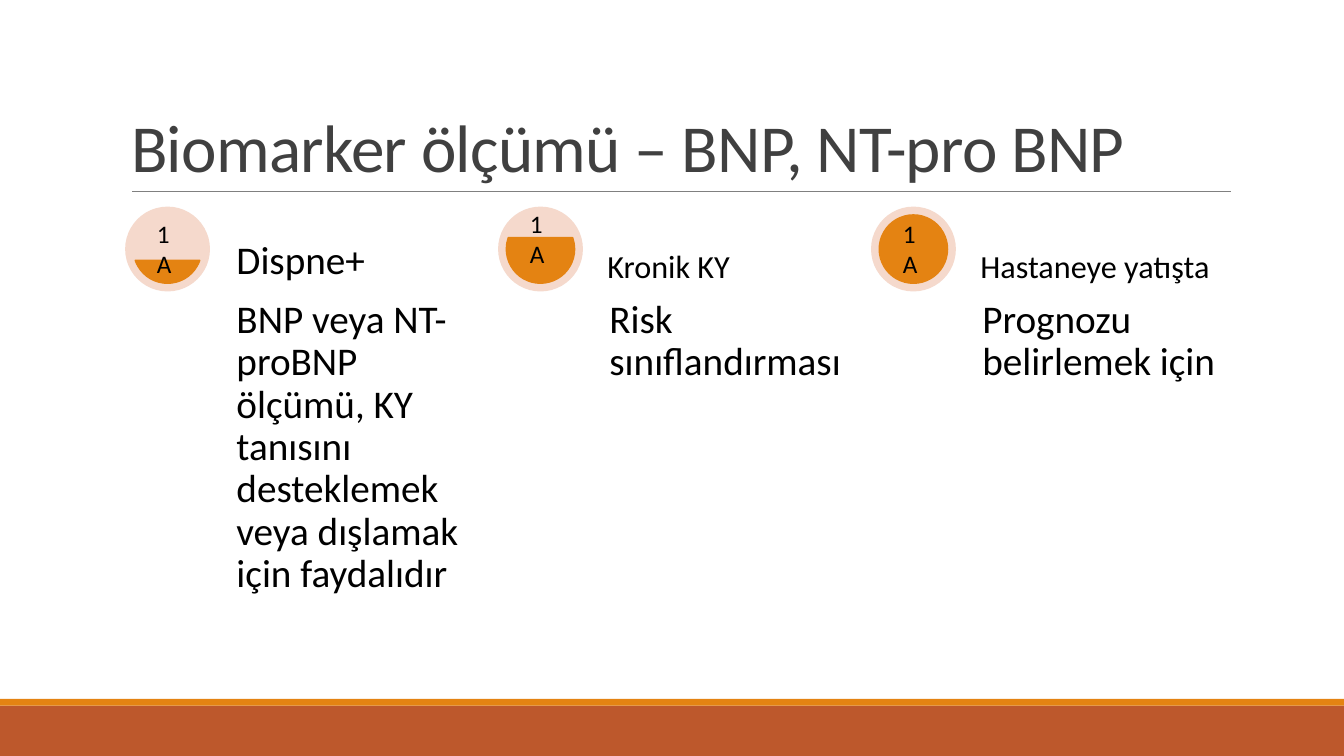
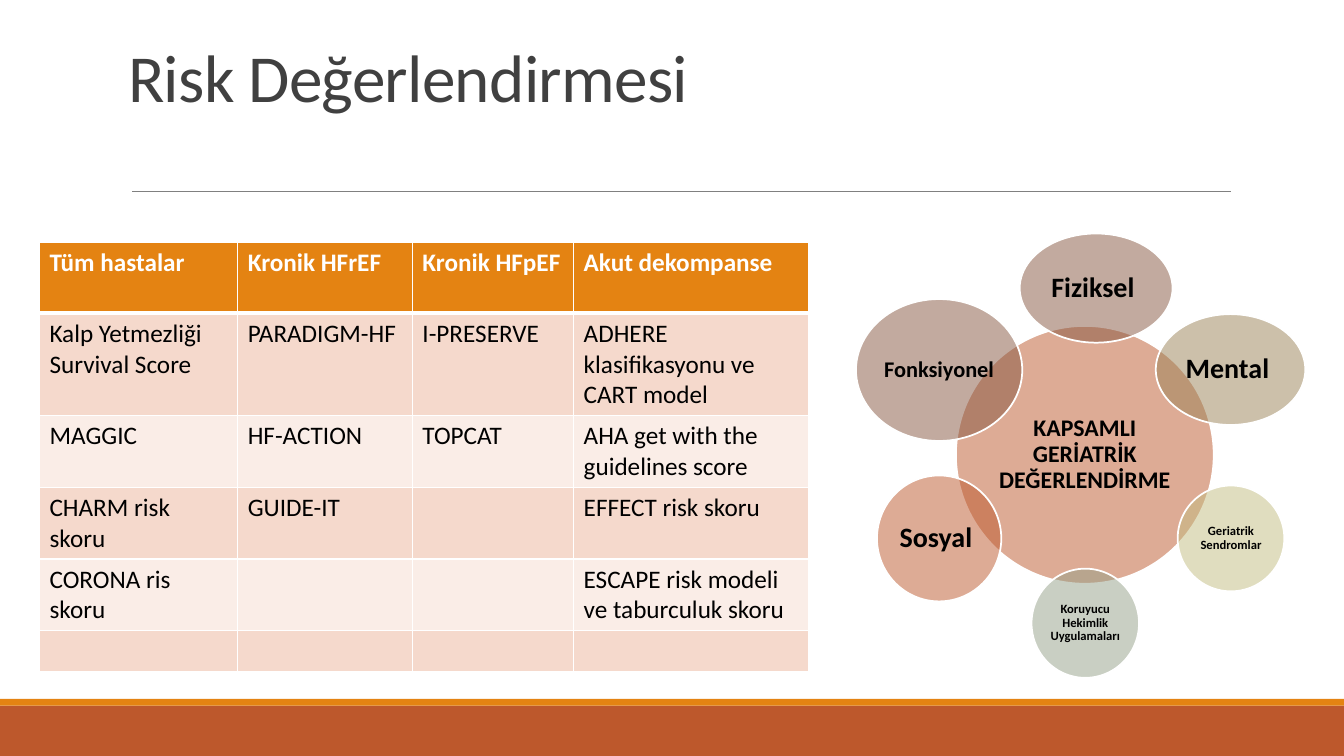
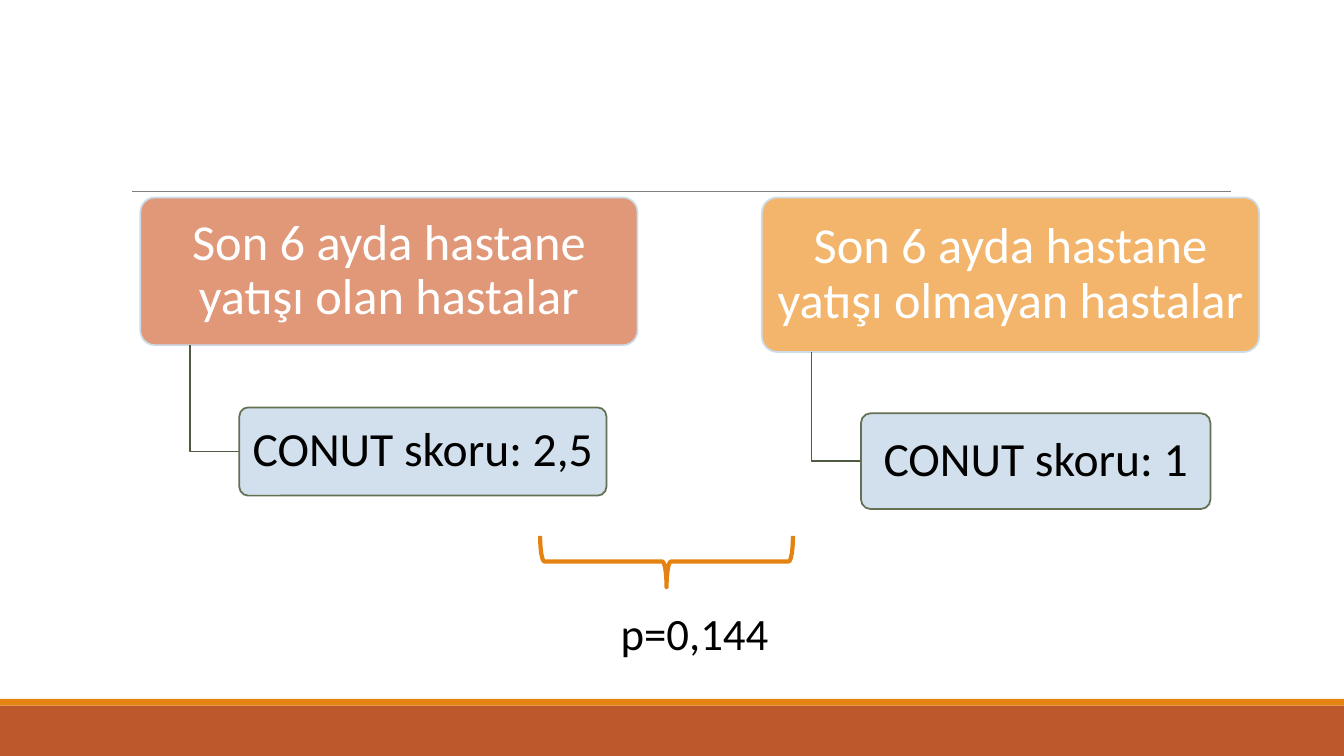
"""Build three slides on heart failure biomarkers, risk assessment and CONUT scores."""
from dataclasses import dataclass

import lxml.etree
import pptx
import pptx.util
from pptx.dml.color import RGBColor
from pptx.enum.shapes import MSO_CONNECTOR, MSO_SHAPE
from pptx.enum.text import MSO_ANCHOR, MSO_AUTO_SIZE, PP_ALIGN
from pptx.oxml.ns import qn

ORANGE = RGBColor(0xE4, 0x83, 0x12)
RUST = RGBColor(0xBD, 0x58, 0x2C)
BROWN = RGBColor(0x86, 0x56, 0x40)
TAN = RGBColor(0x9B, 0x83, 0x57)
KHAKI = RGBColor(0xC2, 0xBC, 0x80)
SAGE = RGBColor(0x94, 0xA0, 0x88)
PINK = RGBColor(0xF5, 0xD9, 0xCC)
PALE_PINK = RGBColor(0xFA, 0xED, 0xE7)
SALMON = RGBColor(0xE0, 0x98, 0x78)
APRICOT = RGBColor(0xF3, 0xB5, 0x6C)
PALE_BLUE = RGBColor(0xCC, 0xDD, 0xEA)
MOSS = RGBColor(0x63, 0x70, 0x52)
DARK_MOSS = RGBColor(0x4F, 0x5A, 0x42)
GREY = RGBColor(0x80, 0x80, 0x80)
CHARCOAL = RGBColor(0x40, 0x40, 0x40)
BLACK = RGBColor(0, 0, 0)
WHITE = RGBColor(0xFF, 0xFF, 0xFF)

FONT = "Calibri"
COLUMNS, ROWS = 160, 90
WIDTH, HEIGHT = pptx.util.Inches(13.3333), pptx.util.Inches(7.5)


@dataclass(frozen=True)
class Box:
    """Place on the grid, in columns and rows."""
    x: float
    y: float
    w: float
    h: float

    def emu(self) -> tuple[int, int, int, int]:
        """Return left, top, width and height in EMU."""
        return col(self.x), row(self.y), col(self.w), row(self.h)


@dataclass(frozen=True)
class Use:
    """One use of a biomarker."""
    heading: str
    size: int
    body: str
    chord: tuple[float, float]
    badge_y: float


@dataclass(frozen=True)
class Bubble:
    """One circle of the geriatric assessment."""
    text: str
    size: int
    color: RGBColor
    box: Box


@dataclass(frozen=True)
class Group:
    """One patient group with its score."""
    name: str
    color: RGBColor
    box: Box
    score: str
    score_box: Box


USES = [
    Use("Dispne+", 28, "BNP veya NT-proBNP ölçümü, KY tanısını desteklemek "
        "veya dışlamak için faydalıdır", (11.68, 96.32), 25.4),
    Use("Kronik KY", 23, "Risk sınıflandırması", (204.32, 119.68), 24.2),
    Use("Hastaneye yatışta", 23, "Prognozu belirlemek için", (162, 162), 25.4),
]
BUBBLES = [
    Bubble("KAPSAMLI GERİATRİK DEĞERLENDİRME", 17, RUST, Box(113.8, 38.8, 30.7, 30.7)),
    Bubble("Fiziksel ", 20, BROWN, Box(121.4, 27.8, 18.2, 13)),
    Bubble("Mental ", 20, TAN, Box(137.6, 37.4, 17.8, 13.2)),
    Bubble("Geriatrik Sendromlar", 9, KHAKI, Box(140.2, 57.8, 12.7, 12.6)),
    Bubble("Koruyucu Hekimlik Uygulamaları", 9, SAGE, Box(122.8, 67.7, 12.8, 13)),
    Bubble("Sosyal ", 20, RUST, Box(104.4, 56.6, 14.8, 15)),
    Bubble("Fonksiyonel", 16, BROWN, Box(101.9, 35.6, 19.8, 16.9)),
]
RISK_COLUMNS = [23.6, 20.8, 19.2, 28]
RISK_ROWS = [8.4, 12, 8.4, 8.4, 8.4, 4.9]
RISK_SCORES = [
    ["Tüm hastalar", "Kronik HFrEF", "Kronik HFpEF", "Akut dekompanse"],
    ["Kalp Yetmezliği Survival Score", "PARADIGM-HF", "I-PRESERVE",
     "ADHERE klasifikasyonu ve CART model"],
    ["MAGGIC", "HF-ACTION", "TOPCAT", "AHA get with the guidelines score"],
    ["CHARM risk skoru", "GUIDE-IT", "", "EFFECT risk skoru"],
    ["CORONA ris skoru", "", "", "ESCAPE risk modeli ve taburculuk skoru"],
    ["", "", "", ""],
]
GROUPS = [
    Group("Son 6 ayda hastane yatışı olan hastalar", SALMON, Box(16.7, 23.5, 59.2, 17.6),
          "CONUT skoru: 2,5", Box(28.5, 48.5, 43.7, 10.5)),
    Group("Son 6 ayda hastane yatışı olmayan hastalar", APRICOT, Box(90.7, 23.5, 59.2, 18.4),
          "CONUT skoru: 1", Box(102.5, 49.2, 41.6, 11.4)),
]


def col(n: float) -> int:
    """Convert grid columns to EMU."""
    return round(n * WIDTH / COLUMNS)


def row(n: float) -> int:
    """Convert grid rows to EMU."""
    return round(n * HEIGHT / ROWS)


def write(tf, text: str, size: float, color: RGBColor = BLACK, bold: bool = False,
          align=PP_ALIGN.LEFT, spacing: float = 1.0):
    """Write one formatted paragraph and return it."""
    p = tf.paragraphs[0]
    p.text = text
    p.alignment = align
    p.line_spacing = spacing
    p.font.name, p.font.size, p.font.bold = FONT, pptx.util.Pt(size), bold
    p.font.color.rgb = color
    return p


def set_insets(tf, x: float, y: float) -> None:
    """Set the side and the top and bottom insets in inches."""
    tf.margin_left = tf.margin_right = pptx.util.Inches(x)
    tf.margin_top = tf.margin_bottom = pptx.util.Inches(y)


def add_text(s, box: Box, text: str, size: float, inset: float | None = None,
             anchor=MSO_ANCHOR.TOP, spacing: float = 1.0) -> None:
    """Add a wrapped text box."""
    tf = s.shapes.add_textbox(*box.emu()).text_frame
    tf.word_wrap = True
    tf.vertical_anchor = anchor
    if inset is not None:
        set_insets(tf, inset, inset)
    write(tf, text, size, spacing=spacing)


def style_line(sp, color: RGBColor, width: float) -> None:
    """Set an outline."""
    sp.line.color.rgb = color
    sp.line.width = pptx.util.Pt(width)


def add_shape(s, kind, box: Box, fill: RGBColor | None, line: RGBColor | None = None,
              width: float = 1.25, alpha: int = 100):
    """Add a flat preset shape."""
    sp = s.shapes.add_shape(kind, *box.emu())
    sp.shadow.inherit = False
    if fill is None:
        sp.fill.background()
    else:
        sp.fill.solid()
        sp.fill.fore_color.rgb = fill
        if alpha < 100:
            clr = sp.element.spPr.find(f"{qn('a:solidFill')}/{qn('a:srgbClr')}")
            lxml.etree.SubElement(clr, qn("a:alpha")).set("val", str(alpha * 1000))
    if line is None:
        sp.line.fill.background()
    else:
        style_line(sp, line, width)
    return sp


def label(sp, text: str, size: float, color: RGBColor, inset: tuple[float, float],
          bold: bool = False) -> None:
    """Write centred text inside a shape."""
    tf = sp.text_frame
    tf.word_wrap = True
    tf.vertical_anchor = MSO_ANCHOR.MIDDLE
    set_insets(tf, *inset)
    write(tf, text, size, color, bold, PP_ALIGN.CENTER, 0.9)


def add_frame(prs, s) -> None:
    """Put the bands and the title rule on the slide master."""
    band = add_shape(s, MSO_SHAPE.RECTANGLE, Box(0, 84, COLUMNS, 6), RUST)
    strip = add_shape(s, MSO_SHAPE.RECTANGLE, Box(0, 83.2, COLUMNS, 0.8), ORANGE)
    rule = s.shapes.add_connector(MSO_CONNECTOR.STRAIGHT, col(15.75), row(22.8),
                                  col(146.5), row(22.8))
    style_line(rule, GREY, 0.5)
    lxml.etree.SubElement(rule.element.spPr, qn("a:effectLst"))
    for number, sp in enumerate((band, strip, rule), 101):
        sp.element.xpath(".//p:cNvPr")[0].set("id", str(number))
        prs.slide_master.shapes.element.append(sp.element)


def add_title(s, text: str, box: Box) -> None:
    """Move and format the title placeholder."""
    title = s.shapes.title
    title.left, title.top, title.width, title.height = box.emu()
    tf = title.text_frame
    tf.auto_size = MSO_AUTO_SIZE.NONE
    tf.vertical_anchor = MSO_ANCHOR.BOTTOM
    p = write(tf, text, 48, CHARCOAL, spacing=0.85)
    p.runs[0].font._element.set("spc", "-50")


def add_uses(s) -> None:
    """Draw the three biomarker uses."""
    pitch = 44.4
    for i, use in enumerate(USES):
        x = 14.9 + i * pitch
        add_shape(s, MSO_SHAPE.OVAL, Box(x, 24.6, 10.1, 10.1), PINK)
        chord = add_shape(s, MSO_SHAPE.CHORD, Box(x + 1, 25.6, 8.1, 8.1), ORANGE, ORANGE)
        chord.adjustments[0], chord.adjustments[1] = use.chord
        add_text(s, Box(x + 12.3, 34.7, 30, 42.6), use.body, 28, 0.08, spacing=0.9)
        add_text(s, Box(x + 12.3, 24.6, 30, 10.1), use.heading, use.size,
                 0.08 if use.size > 25 else 0.06, MSO_ANCHOR.BOTTOM, 0.9)
        add_text(s, Box(x + 2.6, use.badge_y, 5.5, 8.5), "1A", 18)


def add_bubbles(s) -> None:
    """Draw the overlapping assessment circles."""
    for bubble in BUBBLES:
        sp = add_shape(s, MSO_SHAPE.OVAL, bubble.box, bubble.color, WHITE, alpha=50)
        label(sp, bubble.text, bubble.size, BLACK, (0.01, 0.01), True)


def add_borders(cell, bottom: float) -> None:
    """Give a cell white borders."""
    tc_pr = cell._tc.get_or_add_tcPr()
    for side, width in (("L", 1), ("R", 1), ("T", 1), ("B", bottom)):
        ln = lxml.etree.SubElement(tc_pr, qn(f"a:ln{side}"), w=str(pptx.util.Pt(width)))
        fill = lxml.etree.SubElement(ln, qn("a:solidFill"))
        lxml.etree.SubElement(fill, qn("a:srgbClr"), val=str(WHITE))


def add_risk_table(s) -> None:
    """Draw the table of risk scores."""
    box = Box(4.7, 28.9, sum(RISK_COLUMNS), sum(RISK_ROWS))
    table = s.shapes.add_table(len(RISK_ROWS), len(RISK_COLUMNS), *box.emu()).table
    for column, width in zip(table.columns, RISK_COLUMNS):
        column.width = col(width)
    for r, (texts, height) in enumerate(zip(RISK_SCORES, RISK_ROWS)):
        table.rows[r].height = row(height)
        header = r == 0
        for c, text in enumerate(texts):
            cell = table.cell(r, c)
            add_borders(cell, 3 if header else 1)
            cell.fill.solid()
            cell.fill.fore_color.rgb = ORANGE if header else PINK if r % 2 else PALE_PINK
            write(cell.text_frame, text, 18, WHITE if header else BLACK, header)


def add_groups(s) -> None:
    """Draw the patient groups, each linked to its score."""
    for group in GROUPS:
        top, low = group.box, group.score_box
        head = add_shape(s, MSO_SHAPE.ROUNDED_RECTANGLE, top, group.color, PALE_BLUE)
        label(head, group.name, 36, WHITE, (0.07, 0.05))
        x, y = top.x + top.w / 10, low.y + low.h / 2
        builder = s.shapes.build_freeform(col(x), row(top.y + top.h))
        builder.add_line_segments([(col(x), row(y)), (col(low.x), row(y))], close=False)
        elbow = builder.convert_to_shape()
        elbow.shadow.inherit = False
        elbow.fill.background()
        style_line(elbow, DARK_MOSS, 1.25)
        score = add_shape(s, MSO_SHAPE.ROUNDED_RECTANGLE, low, PALE_BLUE, MOSS, alpha=90)
        label(score, group.score, 34, BLACK, (0.07, 0.05))
        head.adjustments[0] = score.adjustments[0] = 0.1


def main() -> None:
    """Build and save the presentation."""
    prs = pptx.Presentation()
    prs.slide_width, prs.slide_height = WIDTH, HEIGHT
    title_only, blank = prs.slide_layouts[5], prs.slide_layouts[6]

    s = prs.slides.add_slide(title_only)
    add_frame(prs, s)
    add_title(s, "Biomarker ölçümü – BNP, NT-pro BNP", Box(14.4, 3.7, 132, 19.1))
    add_uses(s)

    s = prs.slides.add_slide(title_only)
    add_title(s, "Risk Değerlendirmesi", Box(14.05, -4.7, 132, 19.1))
    add_bubbles(s)
    add_risk_table(s)

    s = prs.slides.add_slide(blank)
    add_groups(s)
    brace = add_shape(s, MSO_SHAPE.RIGHT_BRACE, Box(76.3, 51.8, 6.1, 30.1), None, ORANGE, 3)
    brace.rotation = 90
    add_text(s, Box(72.7, 71.5, 21.1, 7.7), "p=0,144", 32)

    prs.save("out.pptx")


if __name__ == "__main__":
    main()
